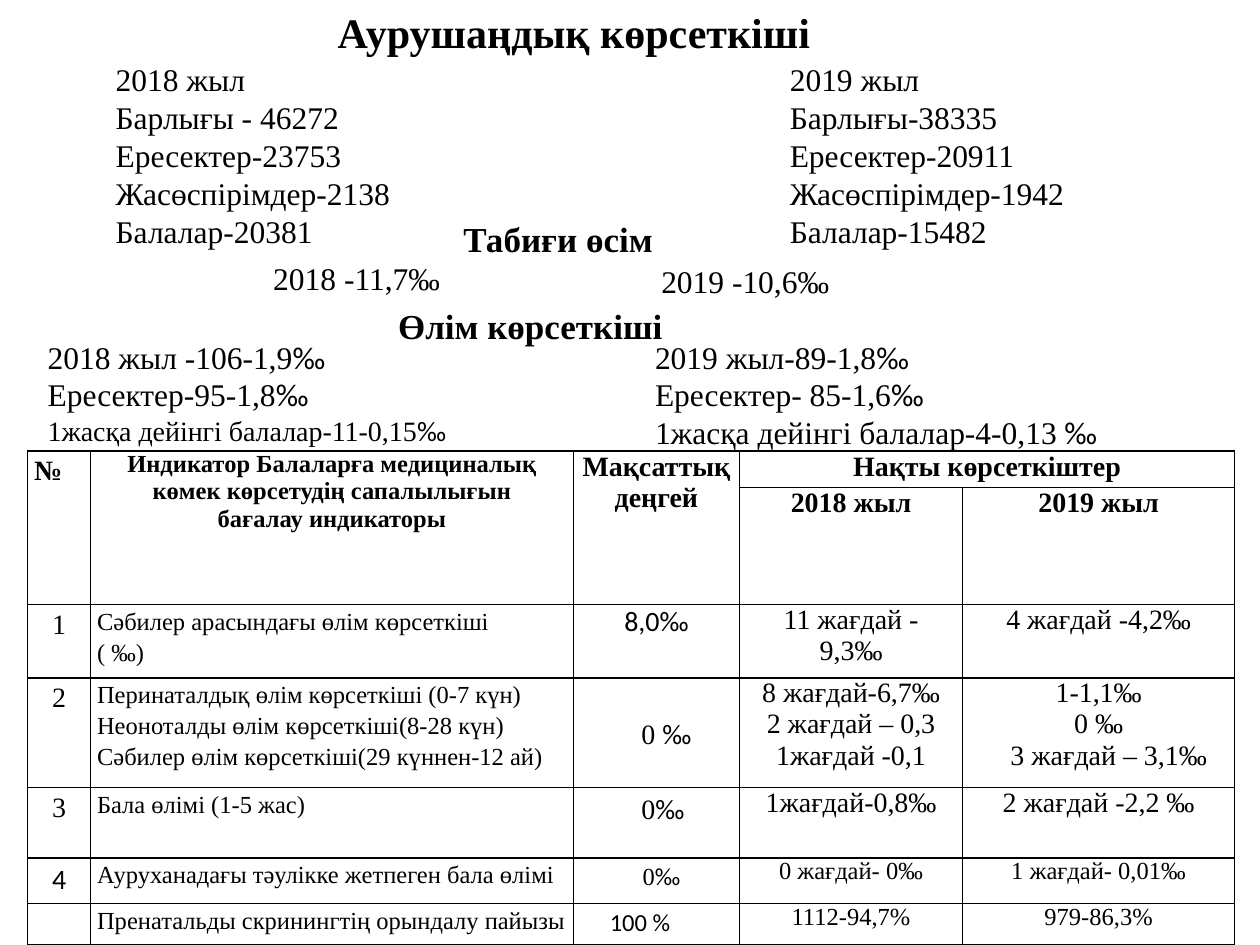
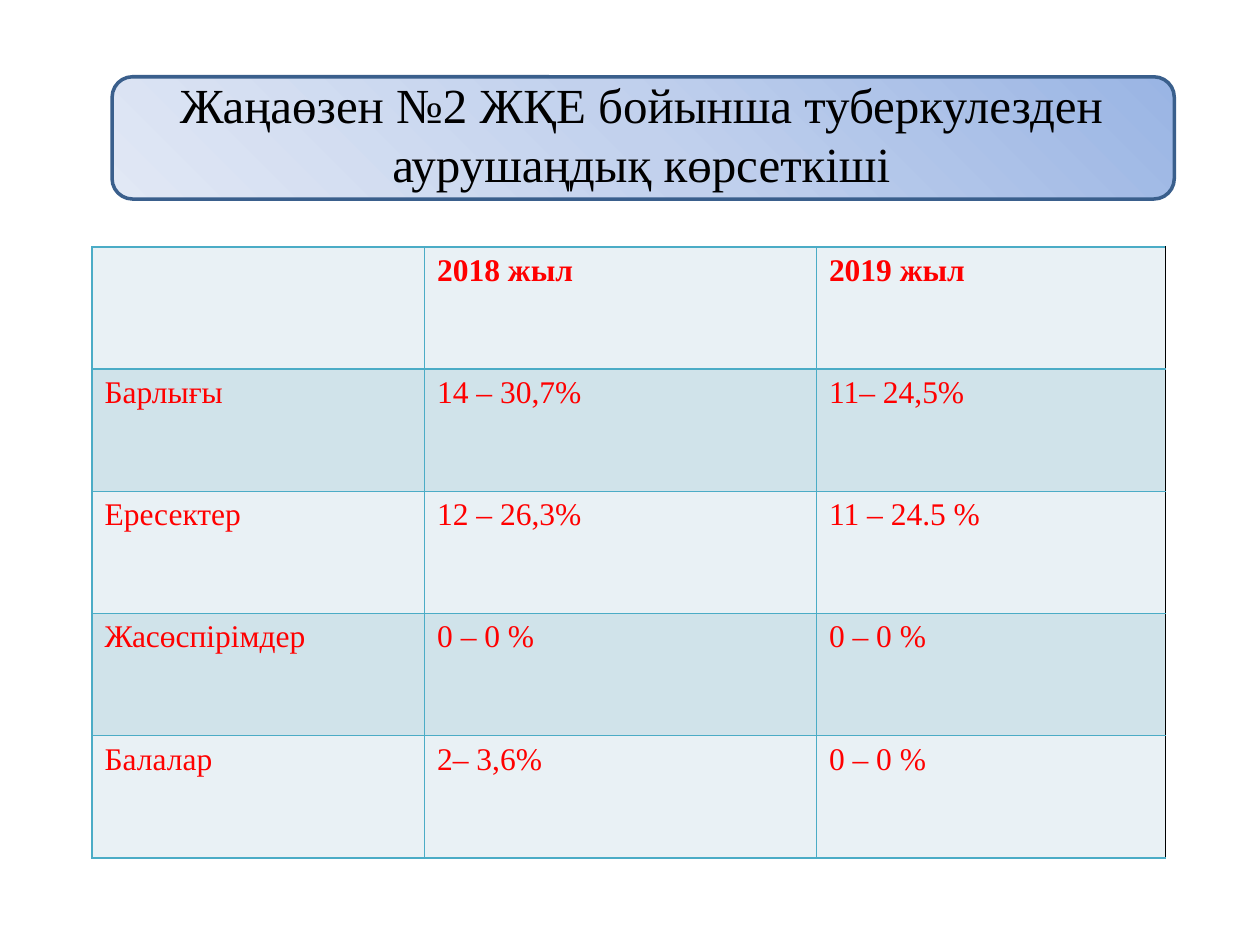
from dataclasses import dataclass

from lxml import etree
from pptx import Presentation
from pptx import util as u
from pptx.dml.color import RGBColor
from pptx.enum import shapes, text
from pptx.oxml import parse_xml
from pptx.oxml.ns import qn

PX = 9144
LEFT, CENTER = text.PP_ALIGN.LEFT, text.PP_ALIGN.CENTER


def px(n):
    return u.Emu(n * PX)


@dataclass(frozen=True)
class Theme:
    font: str = "Times New Roman"
    symbol_font: str = "Calibri"
    ink: str = "000000"
    alert: str = "FF0000"
    grid: str = "4BACC6"
    banner_line: str = "3A5F8C"
    banner_stops: tuple = ((0, "9AB5E4"), (50, "C2D1ED"), (100, "E1E8F5"))
    bands: tuple = ("E9F1F5", "D0E3EA")
    banner: int = 28
    title: int = 24
    heading: int = 20
    body: int = 18
    cell: int = 16
    small: int = 14


class Deck:
    def __init__(self, theme):
        self.theme = theme
        self.prs = Presentation()
        self.prs.slide_width, self.prs.slide_height = px(1000), px(750)
        self.slide = None

    def new_slide(self):
        self.slide = self.prs.slides.add_slide(self.prs.slide_layouts[5])

    def set_text(self, tf, content, size, bold=False, align=LEFT, color=None, spacing=None, indent=0):
        """Text after a bar is set in the symbol font."""
        for i, line in enumerate(content.split("\n")):
            p = tf.paragraphs[0] if i == 0 else tf.add_paragraph()
            p.alignment = align
            if spacing:
                p.line_spacing = spacing
            if indent:
                p._p.get_or_add_pPr().set("marL", str(px(indent)))
            p.font.name = self.theme.font
            p.font.size = u.Pt(size)
            p.font.bold = bold
            p.font.color.rgb = RGBColor.from_string(color or self.theme.ink)
            plain, _, symbol = line.partition("|")
            if plain:
                p.add_run().text = plain
            if symbol:
                r = p.add_run()
                r.text = symbol
                r.font.name = self.theme.symbol_font

    def title(self, box, content, size, **style):
        sp = self.slide.shapes.title
        sp.left, sp.top, sp.width, sp.height = map(px, box)
        tf = sp.text_frame
        tf.auto_size = text.MSO_AUTO_SIZE.NONE
        tf.vertical_anchor = text.MSO_ANCHOR.TOP
        self.set_text(tf, content, size, **style)
        self.slide.shapes.element.append(sp.element)

    def text(self, box, content, size, **style):
        tf = self.slide.shapes.add_textbox(*map(px, box)).text_frame
        tf.word_wrap = True
        self.set_text(tf, content, size, **style)
        return tf

    def banner(self, box):
        sp = self.slide.shapes.add_shape(shapes.MSO_SHAPE.ROUNDED_RECTANGLE, *map(px, box))
        sp.shadow.inherit = False
        sp.line.color.rgb = RGBColor.from_string(self.theme.banner_line)
        sp.line.width = u.Pt(2)
        sp.fill.gradient()
        stops = "".join(
            f'<a:gs pos="{pos * 1000}"><a:srgbClr val="{color}"/></a:gs>'
            for pos, color in self.theme.banner_stops
        )
        grad = parse_xml(
            '<a:gradFill xmlns:a="http://schemas.openxmlformats.org/drawingml/2006/main" rotWithShape="1">'
            f'<a:gsLst>{stops}</a:gsLst><a:path path="circle">'
            '<a:fillToRect l="100000" b="100000"/></a:path></a:gradFill>'
        )
        props = sp.element.spPr
        props.replace(props.find(qn("a:gradFill")), grad)

    def table(self, left, top, cols, rows):
        box = map(px, (left, top, sum(cols), sum(rows)))
        tbl = self.slide.shapes.add_table(len(rows), len(cols), *box).table
        tbl.first_row = tbl.horz_banding = False
        for col, width in zip(tbl.columns, cols):
            col.width = px(width)
        for row, height in zip(tbl.rows, rows):
            row.height = px(height)
        return tbl

    def borders(self, cell, color, right=None):
        tc_pr = cell._tc.get_or_add_tcPr()
        for side in "LRTB":
            ln = etree.SubElement(tc_pr, qn(f"a:ln{side}"), w=str(u.Pt(1)))
            fill = etree.SubElement(ln, qn("a:solidFill"))
            shade = right if right and side == "R" else color
            etree.SubElement(fill, qn("a:srgbClr"), val=shade)

    def pad(self, cell, side):
        cell.margin_left = cell.margin_right = px(side)
        cell.margin_top = cell.margin_bottom = 0


INDICATORS = [
    ["№", "Индикатор Балаларға медициналық көмек көрсетудің сапалылығын\nбағалау индикаторы",
     "Мақсаттық деңгей", "Нақты көрсеткіштер", ""],
    ["", "", "", "2018 жыл", "2019 жыл"],
    ["1", "Сәбилер арасындағы өлім көрсеткіші\n( ‰)", "|8,0‰", "11 жағдай -\n9,3‰", "4 жағдай -4,2‰"],
    ["2", "Перинаталдық өлім көрсеткіші (0-7 күн)\nНеоноталды өлім көрсеткіші(8-28 күн)\n"
     "Сәбилер өлім көрсеткіші(29 күннен-12 ай)", "0 |‰",
     "8 жағдай-6,7‰\n2 жағдай – 0,3\n1жағдай -0,1", "1-1,1‰\n0 ‰\n3 жағдай – 3,1‰"],
    ["3", "Бала өлімі (1-5 жас)", "0|‰", "1жағдай-0,8‰", "2 жағдай -2,2 ‰"],
    ["|4", "Ауруханадағы тәулікке жетпеген бала өлімі", "0|‰", "0 жағдай- 0‰", "1 жағдай- 0,01‰"],
    ["", "Пренатальды скринингтің орындалу пайызы", "|100 %", "1112-94,7%", "979-86,3%"],
]

TUBERCULOSIS = [
    ["", "2018 жыл", "2019 жыл"],
    ["Барлығы", "14 – 30,7%", "11– 24,5%"],
    ["Ересектер", "12 – 26,3%", "11 – 24.5 %"],
    ["Жасөспірімдер", "0 – 0 %", "0 – 0 %"],
    ["Балалар", "2– 3,6%", "0 – 0 %"],
]


def indicator_table(deck):
    th = deck.theme
    target_indents = {3: 49, 4: 49, 5: 48, 6: 22}
    tbl = deck.table(22, 358, [50, 383, 132, 177, 216], [29, 93, 58, 87, 56, 36, 33])
    for r, row in enumerate(INDICATORS):
        for c, content in enumerate(row):
            cell = tbl.cell(r, c)
            header, late = r < 2, r > 4 and c > 1
            indent = target_indents.get(r, 0) if c == 2 else 0
            left = indent or (c == 1 and not header) or (r, c) == (0, 0)
            loose = c == 0 or (c == 1 and not header) or indent
            deck.pad(cell, 7 if late else 5)
            deck.borders(cell, th.ink)
            cell.fill.background()
            deck.set_text(cell.text_frame, content, th.small if c == 1 or late else th.cell,
                          bold=header, align=LEFT if left else CENTER,
                          spacing=1.15 if loose else None, indent=indent)
    tbl.cell(3, 2).vertical_anchor = text.MSO_ANCHOR.MIDDLE
    tbl.cell(3, 4).text_frame.paragraphs[2]._p.get_or_add_pPr().set("marL", str(px(16)))
    for c in range(3):
        tbl.cell(0, c).merge(tbl.cell(1, c))
    tbl.cell(0, 3).merge(tbl.cell(0, 4))


def morbidity_slide(deck):
    th = deck.theme
    deck.new_slide()
    deck.title((258, 0, 490, 50), "Аурушаңдық көрсеткіші", th.title, bold=True)
    deck.text((82, 43, 313, 162), "2018 жыл\nБарлығы - 46272\nЕресектер-23753\nЖасөспірімдер-2138\nБалалар-20381", th.body)
    deck.text((617, 43, 407, 162), "2019 жыл\nБарлығы-38335\nЕресектер-20911\nЖасөспірімдер-1942\nБалалар-15482", th.body)
    deck.text((11, 237, 820, 44), "Өлім көрсеткіші", th.heading, bold=True, align=CENTER)
    deaths = deck.text((28, 263, 437, 131),
                       "2018 жыл -106-1,9|‰\nЕресектер-95-1,8|‰\n1жасқа дейінгі балалар-11-0,15|‰", th.body)
    deaths.paragraphs[2].font.size = u.Pt(th.cell)
    deck.text((510, 263, 442, 135),
              "2019 жыл-89-1,8|‰\nЕресектер- 85-1,6|‰\n1жасқа дейінгі балалар-4-0,13| ‰", th.body)
    deck.text((358, 168, 368, 44), "Табиғи өсім", th.heading, bold=True)
    deck.text((207, 201, 282, 40), "2018 -11,7‰", th.body)
    deck.text((515, 203, 327, 40), "2019 -10,6‰", th.body)
    indicator_table(deck)


def tuberculosis_slide(deck):
    th = deck.theme
    deck.new_slide()
    deck.banner((89, 61, 843, 97))
    deck.title((58, 54, 902, 104), "Жаңаөзен №2 ЖҚЕ бойынша туберкулезден\nаурушаңдық көрсеткіші",
               th.banner, align=CENTER)
    tbl = deck.table(73, 196, [264, 311, 277], [97] * len(TUBERCULOSIS))
    for r, row in enumerate(TUBERCULOSIS):
        for c, content in enumerate(row):
            cell = tbl.cell(r, c)
            deck.borders(cell, th.grid, right=th.ink if c == 2 else None)
            cell.fill.solid()
            cell.fill.fore_color.rgb = RGBColor.from_string(th.bands[r % 2])
            deck.set_text(cell.text_frame, content, th.body, bold=r == 0, color=th.alert)


def main():
    deck = Deck(Theme())
    morbidity_slide(deck)
    tuberculosis_slide(deck)
    deck.prs.save("out.pptx")


if __name__ == "__main__":
    main()
